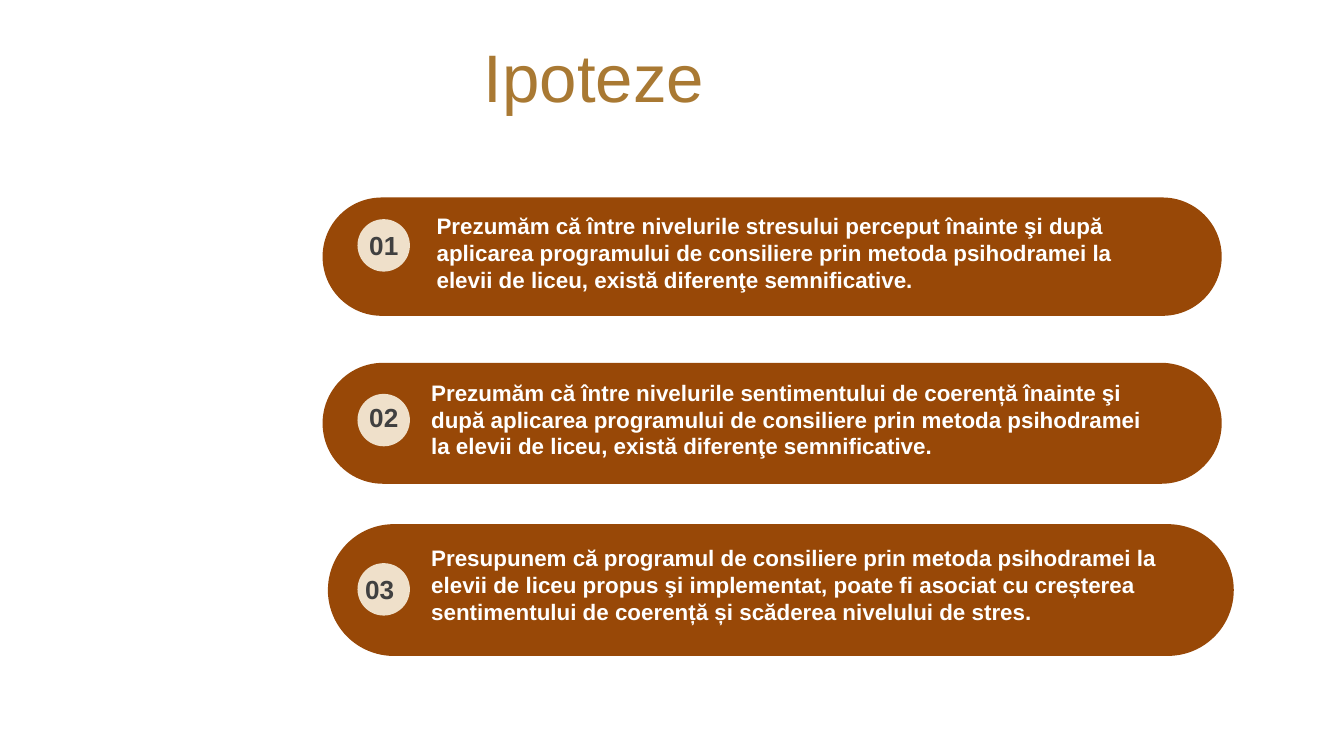
from pptx import Presentation
from pptx.dml.color import RGBColor
from pptx.enum.shapes import MSO_SHAPE as Kind
from pptx.enum.text import MSO_ANCHOR as Anchor, MSO_AUTO_SIZE as Fit, PP_ALIGN as Align
from pptx.util import Pt

# Per hypothesis: bar box, disc top, number place, text place and width, wording
ITEMS = [
    ((172.8, 105.8, 481.7, 63.4), 117.4, (189.4, 119.5), (226.8, 110.2, 382.3),
     "Prezumăm că între nivelurile stresului perceput înainte şi după "
     "aplicarea programului de consiliere prin metoda psihodramei la "
     "elevii de liceu, există diferenţe semnificative."),
    ((172.8, 194.4, 481.7, 64.8), 211, (189.4, 211.7), (223.9, 199.4, 408.2),
     "Prezumăm că între nivelurile sentimentului de coerență înainte şi "
     "după aplicarea programului de consiliere prin metoda psihodramei "
     "la elevii de liceu, există diferenţe semnificative."),
    ((175.7, 280.8, 485.3, 70.6), 301.7, (187.2, 303.8), (223.9, 288, 414),
     "Presupunem că programul de consiliere prin metoda psihodramei la "
     "elevii de liceu propus şi implementat, poate fi asociat cu creșterea "
     "sentimentului de coerență și scăderea nivelului de stres."),
]


def color(code):
    return RGBColor.from_string(code)


class Deck:
    face = "Arial"
    gold, brown, cream = "A97933", "984807", "EFE0CA"
    white, gray = "FFFFFF", "404040"

    def __init__(self):
        self.deck = Presentation()
        self.deck.slide_width, self.deck.slide_height = Pt(720), Pt(405)
        self.slide = self.deck.slides.add_slide(self.deck.slide_layouts[5])

    def add_run(self, frame, words, size, tint, bold=False, align=Align.LEFT):
        frame.word_wrap = True
        para = frame.paragraphs[0]
        para.alignment = align
        run = para.add_run()
        run.text = words
        font = run.font
        font.name, font.size, font.bold = self.face, Pt(size), bold
        font.color.rgb = color(tint)

    def title(self, words, x, y, w, h):
        box = self.slide.shapes.title
        box.left, box.top, box.width, box.height = map(Pt, (x, y, w, h))
        frame = box.text_frame
        frame.auto_size = Fit.NONE
        frame.vertical_anchor = Anchor.MIDDLE
        self.add_run(frame, words, 36, self.gold)

    def shape(self, kind, tint, x, y, w, h):
        item = self.slide.shapes.add_shape(kind, *map(Pt, (x, y, w, h)))
        item.shadow.inherit = False
        item.fill.solid()
        item.fill.fore_color.rgb = color(tint)
        item.line.fill.background()
        return item

    def bar(self, *box):
        self.shape(Kind.ROUNDED_RECTANGLE, self.brown, *box).adjustments[0] = 0.5

    def disc(self, x, y, size):
        self.shape(Kind.OVAL, self.cream, x, y, size, size)

    def text(self, words, x, y, w, h, *style):
        box = self.slide.shapes.add_textbox(*map(Pt, (x, y, w, h)))
        self.add_run(box.text_frame, words, *style)
        box.text_frame.auto_size = Fit.SHAPE_TO_FIT_TEXT


def main():
    deck = Deck()
    deck.title("Ipoteze", 252, 18, 563.8, 45.4)
    for num, (bar, top, spot, (x, y, w), words) in enumerate(ITEMS, 1):
        deck.bar(*bar)
        deck.disc(191.5, top, 28.1)
        deck.text(words, x, y, w, 51.1, 12, deck.white, True)
        deck.text(f"{num:02}", *spot, 32.4, 24.5, 14, deck.gray, True, Align.CENTER)
    deck.deck.save("out.pptx")


if __name__ == "__main__":
    main()
